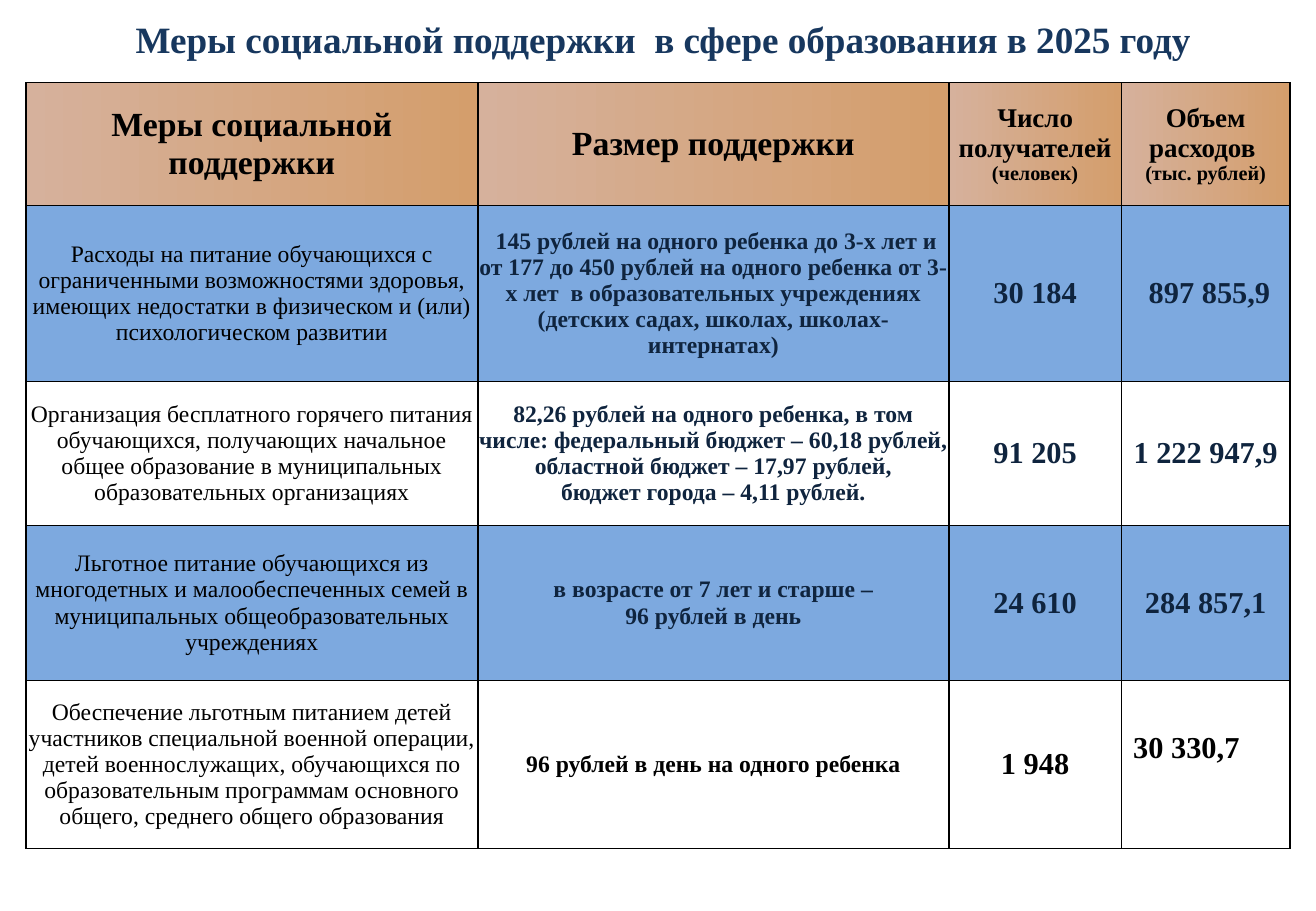
"""Build a slide with a table of social support measures in education."""
from lxml import etree
from pptx import Presentation
from pptx import util as u
from pptx.dml.color import RGBColor
from pptx.enum import text
from pptx.oxml.ns import qn

FONT = "Times New Roman"
COLORS = {
    "title": "17375E",
    "black": "000000",
    "navy": "0F243E",
    "band": "7DA9DF",
    "head_from": "D6B19C",
    "head_to": "D49E6C",
}
TITLE = "Меры социальной поддержки  в сфере образования в 2025 году"
COL_WIDTHS = [9.45, 9.85, 3.6, 3.53]
ROW_HEIGHTS = [2.57, 3.68, 3.01, 3.24, 3.51]
BODY_SIZES = [14, 14, 18, 18]
HEADER = [
    [[("Меры социальной поддержки", 20)]],
    [[("Размер поддержки", 20)]],
    [[("Число получателей ", 16), ("(человек)", 12)]],
    [[("Объем расходов ", 16)], [("(тыс. рублей)", 12)]],
]
MEASURES = [
    [
        "Расходы на питание обучающихся с ограниченными возможностями здоровья, "
        "имеющих недостатки в физическом и (или) психологическом развитии",
        " 145 рублей на одного ребенка до 3-х лет и от 177 до 450 рублей на одного "
        "ребенка от 3-х лет  в образовательных учреждениях (детских садах, школах, "
        "школах-интернатах)",
        "30 184",
        " 897 855,9",
    ],
    [
        "Организация бесплатного горячего питания обучающихся, получающих начальное "
        "общее образование в муниципальных образовательных организациях",
        "82,26 рублей на одного ребенка, в том числе: федеральный бюджет – 60,18 рублей,\n"
        "областной бюджет – 17,97 рублей,\n"
        "бюджет города – 4,11 рублей.",
        "91 205",
        "1 222 947,9",
    ],
    [
        "Льготное питание обучающихся из многодетных и малообеспеченных семей "
        "в муниципальных общеобразовательных учреждениях",
        " в возрасте от 7 лет и старше – \n96 рублей в день",
        "24 610",
        "284 857,1",
    ],
    [
        "Обеспечение льготным питанием детей участников специальной военной операции, "
        "детей военнослужащих, обучающихся по образовательным программам основного "
        "общего, среднего общего образования",
        "96 рублей в день на одного ребенка",
        "1 948",
        "30 330,7",
    ],
]


def rgb(name):
    """Return the named colour."""
    return RGBColor.from_string(COLORS[name])


def add_text(p, content, size=14, bold=True, color="black"):
    """Add a formatted run to a paragraph."""
    r = p.add_run()
    r.text = content
    r.font.name = FONT
    r.font.size = u.Pt(size)
    r.font.bold = bold
    r.font.color.rgb = rgb(color)


def add_title(s):
    """Fill and place the title placeholder."""
    sp = s.shapes.title
    sp.left, sp.top, sp.width, sp.height = u.Cm(0.36), u.Cm(0.18), u.Cm(27), u.Cm(1.25)
    tf = sp.text_frame
    tf.auto_size = text.MSO_AUTO_SIZE.NONE
    tf.vertical_anchor = text.MSO_ANCHOR.MIDDLE
    p = tf.paragraphs[0]
    p.alignment = text.PP_ALIGN.CENTER
    add_text(p, TITLE, size=22, color="title")


def add_borders(cell):
    """Draw a thin black line on each side of a cell."""
    tc_pr = cell._tc.get_or_add_tcPr()
    for side in ("a:lnL", "a:lnR", "a:lnT", "a:lnB"):
        ln = etree.SubElement(tc_pr, qn(side), w=str(u.Pt(1)))
        fill = etree.SubElement(ln, qn("a:solidFill"))
        etree.SubElement(fill, qn("a:srgbClr"), val=COLORS["black"])


def fill_cell(cell, row):
    """Give a cell the fill of its row."""
    if row == 0:
        cell.fill.gradient()
        cell.fill.gradient_angle = 0
        for stop, name in zip(cell.fill.gradient_stops, ("head_from", "head_to")):
            stop.color.rgb = rgb(name)
    elif row % 2:
        cell.fill.solid()
        cell.fill.fore_color.rgb = rgb("band")
    else:
        cell.fill.background()


def write_cell(cell, paragraphs, **fmt):
    """Write centred paragraphs, each a list of (text, size) runs."""
    cell.margin_left = cell.margin_right = cell.margin_top = cell.margin_bottom = 0
    cell.vertical_anchor = text.MSO_ANCHOR.MIDDLE
    tf = cell.text_frame
    for i, runs in enumerate(paragraphs):
        p = tf.add_paragraph() if i else tf.paragraphs[0]
        p.alignment = text.PP_ALIGN.CENTER
        for content, size in runs:
            add_text(p, content, size=size, **fmt)


def add_table(s):
    """Add the table of support measures."""
    frame = s.shapes.add_table(
        len(ROW_HEIGHTS), len(COL_WIDTHS), u.Cm(0.54), u.Cm(1.73),
        u.Cm(sum(COL_WIDTHS)), u.Cm(sum(ROW_HEIGHTS)))
    table = frame.table
    table.first_row = table.horz_banding = False
    for column, width in zip(table.columns, COL_WIDTHS):
        column.width = u.Cm(width)
    for row, height in zip(table.rows, ROW_HEIGHTS):
        row.height = u.Cm(height)

    for col, paragraphs in enumerate(HEADER):
        write_cell(table.cell(0, col), paragraphs)
    for row, measure in enumerate(MEASURES, 1):
        for col, content in enumerate(measure):
            paragraphs = [[(line, BODY_SIZES[col])] for line in content.split("\n")]
            plain = col == 0 or row == len(MEASURES)
            write_cell(table.cell(row, col), paragraphs, bold=col > 0,
                       color="black" if plain else "navy")
    for row in range(len(ROW_HEIGHTS)):
        for col in range(len(COL_WIDTHS)):
            add_borders(table.cell(row, col))
            fill_cell(table.cell(row, col), row)

    last = table.cell(len(MEASURES), len(COL_WIDTHS) - 1)
    last.text_frame.paragraphs[0].alignment = text.PP_ALIGN.LEFT
    last.margin_left, last.margin_bottom = u.Cm(0.25), u.Cm(0.67)


def main():
    """Create and save the presentation."""
    prs = Presentation()
    prs.slide_width, prs.slide_height = u.Cm(27.51), u.Cm(19.05)
    s = prs.slides.add_slide(prs.slide_layouts[5])
    add_title(s)
    add_table(s)
    prs.save("out.pptx")


if __name__ == "__main__":
    main()
